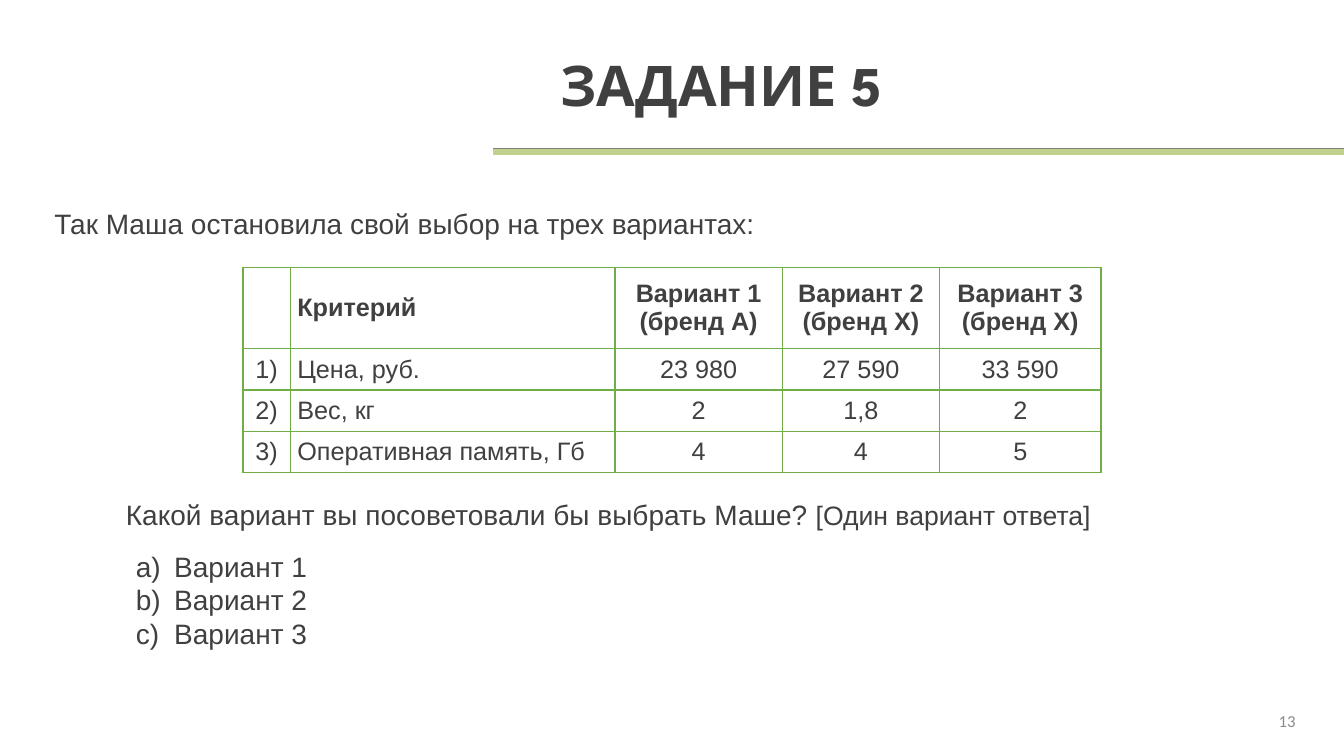
from lxml import etree
from pptx import Presentation
from pptx.dml.color import RGBColor
from pptx.enum.shapes import MSO_CONNECTOR
from pptx.enum.text import MSO_ANCHOR, MSO_AUTO_SIZE, PP_ALIGN
from pptx.oxml.ns import qn
from pptx.util import Inches, Pt

STRAIGHT = MSO_CONNECTOR.STRAIGHT
MIDDLE = MSO_ANCHOR.MIDDLE
NO_FIT = MSO_AUTO_SIZE.NONE
LEFT, CENTER, RIGHT = PP_ALIGN.LEFT, PP_ALIGN.CENTER, PP_ALIGN.RIGHT

TEXT, MUTED = "404040", "8C8C8C"
GREEN, PALE_GREEN, GRAY = "70AD47", "C0D18D", "808080"

COLUMN_WIDTHS = [0.47, 3.22, 1.66, 1.56, 1.6]
ROW_HEIGHTS = [0.81, 0.41, 0.41, 0.41]
CRITERIA = [
    ["", "Критерий", "Вариант 1\n(бренд A)", "Вариант 2\n(бренд Х)", "Вариант 3\n(бренд X)"],
    ["1)", "Цена, руб.", "23 980", "27 590", "33 590"],
    ["2)", "Вес, кг", "2", "1,8", "2"],
    ["3)", "Оперативная память, Гб", "4", "4", "5"],
]


def color(value):
    """Turn a hex string into a colour."""
    return RGBColor.from_string(value)


def format_span(span, size, font="Arial", ink=TEXT, bold=False):
    """Set the font of one run."""
    span.font.name = font
    span.font.size = Pt(size)
    span.font.bold = bold
    span.font.color.rgb = color(ink)


def add_text(slide, box, lines, size=20, font="Arial", ink=TEXT, align=LEFT):
    """Place a wrapped text box and return its text frame."""
    frame = slide.shapes.add_textbox(*map(Inches, box)).text_frame
    frame.word_wrap = True
    frame.text = "\n".join(lines)
    for para in frame.paragraphs:
        para.alignment = align
        for span in para.runs:
            format_span(span, size, font, ink)
    return frame


def add_title(slide, box, text):
    """Move and format the title placeholder."""
    title = slide.shapes.title
    title.left, title.top, title.width, title.height = map(Inches, box)
    frame = title.text_frame
    frame.text = text
    frame.auto_size = NO_FIT
    frame.vertical_anchor = MIDDLE
    para = frame.paragraphs[0]
    para.alignment = LEFT
    para.line_spacing = 0.9
    format_span(para.runs[0], 40, "League Spartan", bold=True)


def add_rule(slide, left, right, top, ink, width):
    """Draw a horizontal line without a shadow."""
    line = slide.shapes.add_connector(
        STRAIGHT, Inches(right), Inches(top), Inches(left), Inches(top))
    line.line.color.rgb = color(ink)
    line.line.width = Pt(width)
    etree.SubElement(line._element.spPr, qn("a:effectLst"))


def add_borders(cell, ink, width):
    """Give a cell the same line on its four sides."""
    properties = cell._tc.get_or_add_tcPr()
    for position, side in enumerate(("lnL", "lnR", "lnT", "lnB")):
        border = etree.Element(qn(f"a:{side}"), w=str(Pt(width)))
        fill = etree.SubElement(border, qn("a:solidFill"))
        etree.SubElement(fill, qn("a:srgbClr"), val=ink)
        properties.insert(position, border)


def add_criteria_table(slide, left, top):
    """Build the comparison table from its top left corner."""
    table = slide.shapes.add_table(
        len(ROW_HEIGHTS), len(COLUMN_WIDTHS), Inches(left), Inches(top),
        Inches(sum(COLUMN_WIDTHS)), Inches(sum(ROW_HEIGHTS))).table
    table.first_row = table.horz_banding = False
    for column, width in zip(table.columns, COLUMN_WIDTHS):
        column.width = Inches(width)
    for row_index, (row, height) in enumerate(zip(table.rows, ROW_HEIGHTS)):
        row.height = Inches(height)
        for column_index, cell in enumerate(row.cells):
            cell.text = CRITERIA[row_index][column_index]
            cell.fill.background()
            cell.vertical_anchor = MIDDLE
            cell.margin_left = cell.margin_right = Inches(0.07)
            cell.margin_top = cell.margin_bottom = 0
            add_borders(cell, GREEN, 1)
            for para in cell.text_frame.paragraphs:
                para.alignment = LEFT if column_index == 1 else CENTER
                for span in para.runs:
                    format_span(span, 18, bold=row_index == 0)


def add_question(slide, box):
    """Place the question with its smaller hint."""
    frame = add_text(slide, box, ["Какой вариант вы посоветовали бы выбрать Маше? "])
    hint = frame.paragraphs[0].add_run()
    hint.text = "[Один вариант ответа]"
    format_span(hint, 19)


def add_answers(slide, box):
    """Place the lettered list of answers."""
    frame = add_text(slide, box, [f"Вариант {number}" for number in range(1, 4)])
    for para in frame.paragraphs:
        properties = para._p.get_or_add_pPr()
        properties.set("marL", str(Inches(0.38)))
        properties.set("indent", str(-Inches(0.38)))
        etree.SubElement(properties, qn("a:buAutoNum"), type="alphaLcParenR")


def build_task_slide(deck):
    """Build the task slide."""
    slide = deck.slides.add_slide(deck.slide_layouts[5])
    add_rule(slide, 4.89, 13.33, 1.5, PALE_GREEN, 5)
    add_rule(slide, 4.89, 13.33, 1.47, GRAY, 0.5)
    add_title(slide, (5.46, 0.15, 7.49, 1.45), "ЗАДАНИЕ 5")
    add_text(slide, (0.44, 2, 12.51, 0.49),
             ["Так Маша остановила свой выбор на трех вариантах:"])
    add_criteria_table(slide, 2.41, 2.65)
    add_question(slide, (1.15, 4.89, 10.08, 0.44))
    add_answers(slide, (1.25, 5.4, 6.67, 1.11))
    number = add_text(slide, (9.42, 6.95, 3.53, 0.4), ["13"], 12, "Calibri", MUTED, RIGHT)
    number.vertical_anchor = MIDDLE


def main():
    """Create and save the deck."""
    deck = Presentation()
    deck.slide_width, deck.slide_height = Inches(13.33), Inches(7.5)
    build_task_slide(deck)
    deck.save("out.pptx")


if __name__ == "__main__":
    main()
